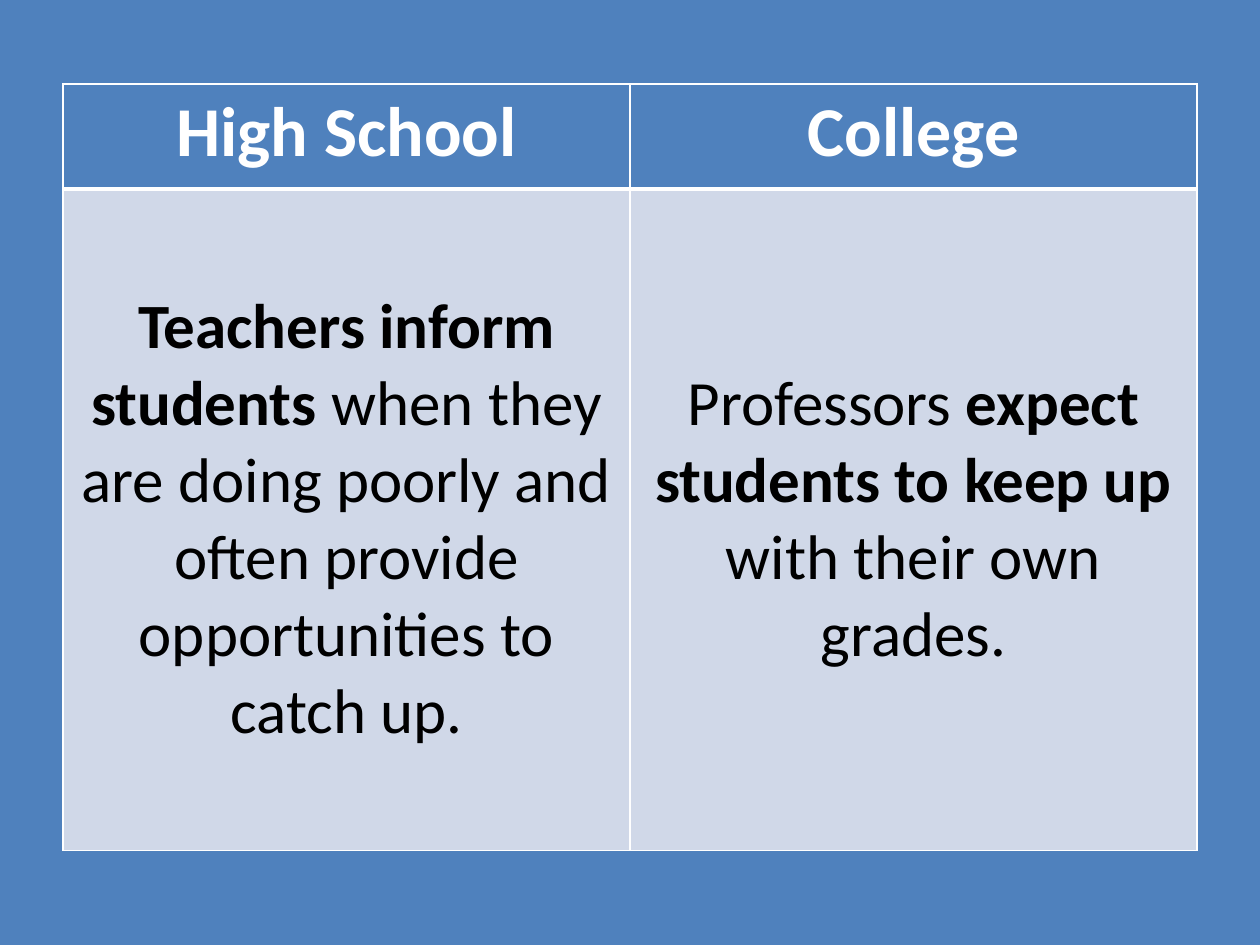
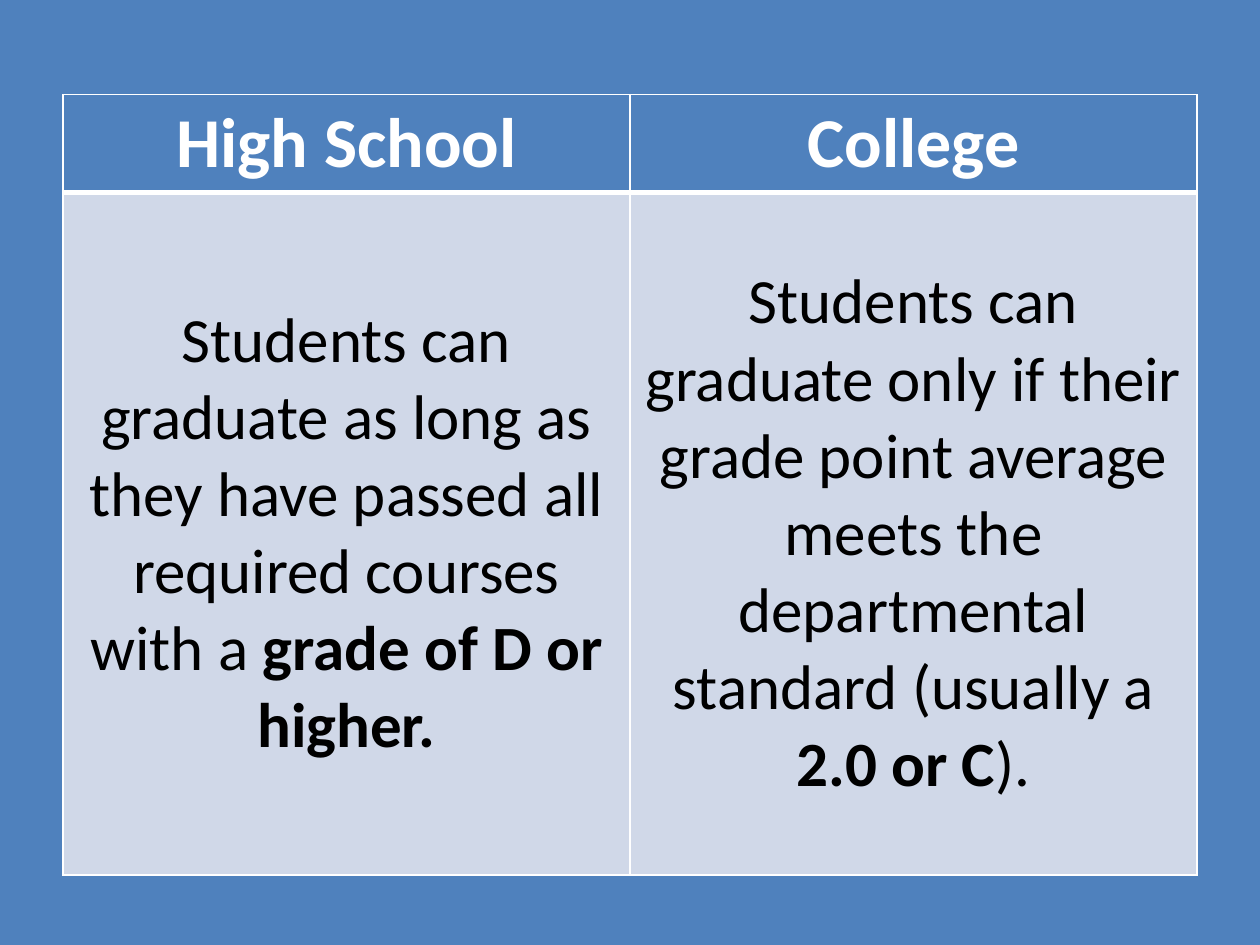
"""Build two slides that compare high school with college."""
from typing import NamedTuple

from lxml.etree import SubElement
from pptx import Presentation
from pptx.dml.color import RGBColor
from pptx.enum.text import MSO_ANCHOR as Anchor, PP_ALIGN as Align
from pptx.oxml.ns import qn
from pptx.util import Inches, Pt

WIDTH, HEIGHT = Inches(10), Inches(7.5)
COL, ROW = WIDTH // 20, HEIGHT // 90
BLUE, PALE, WHITE, BLACK = "4F81BD", "D0D8E8", "FFFFFF", "000000"
HEADINGS = ("High School", "College")


class Run(NamedTuple):
    """A stretch of text, bold or not."""
    text: str
    bold: bool = False


class CellStyle(NamedTuple):
    """The look of one table row; borders run left, right, top, bottom in points."""
    fill: str
    color: str
    size: int
    anchor: Anchor
    borders: tuple[int, int, int, int]


class Comparison(NamedTuple):
    """A two-column comparison, placed in grid rows."""
    top: int
    header_rows: int
    body_rows: int
    high_school: list[Run]
    college: list[Run]


HEADER = CellStyle(BLUE, WHITE, 40, Anchor.TOP, (1, 1, 1, 3))
BODY = CellStyle(PALE, BLACK, 36, Anchor.MIDDLE, (1, 1, 3, 1))

COMPARISONS = [
    Comparison(
        8, 10, 63,
        [Run("Teachers inform students ", True),
         Run("when they are doing poorly and often provide opportunities to catch up.")],
        [Run("Professors "), Run("expect students to keep up ", True),
         Run("with their own grades.")]),
    Comparison(
        9, 9, 65,
        [Run("Students can graduate as long as they have passed all required courses with a "),
         Run("grade of D or higher.", True)],
        [Run("Students can graduate only if their grade point average meets "
             "the departmental standard (usually a "),
         Run("2.0 or C", True), Run(").")]),
]


def rgb(color: str) -> RGBColor:
    """Turn a hex string into a colour."""
    return RGBColor.from_string(color)


def paint(fill, color: str) -> None:
    """Make a fill solid in one colour."""
    fill.solid()
    fill.fore_color.rgb = rgb(color)


def add_borders(cell, widths: tuple[int, int, int, int]) -> None:
    """Draw white borders of the given widths around a cell."""
    props = cell._tc.get_or_add_tcPr()
    for side, width in zip("LRTB", widths):
        line = SubElement(props, qn(f"a:ln{side}"), w=str(Pt(width)))
        solid = SubElement(line, qn("a:solidFill"))
        SubElement(solid, qn("a:srgbClr"), val=WHITE)


def fill_cell(cell, runs: list[Run], style: CellStyle) -> None:
    """Write runs of text into a cell and style it."""
    add_borders(cell, style.borders)
    paint(cell.fill, style.fill)
    cell.vertical_anchor = style.anchor
    p = cell.text_frame.paragraphs[0]
    p.alignment = Align.CENTER
    for run in runs:
        r = p.add_run()
        r.text = run.text
        font = {"name": "Calibri", "size": Pt(style.size), "bold": run.bold}
        for name, value in font.items():
            setattr(r.font, name, value)
        r.font.color.rgb = rgb(style.color)


def add_comparison(prs, comparison: Comparison) -> None:
    """Add a slide that holds one comparison table."""
    s = prs.slides.add_slide(prs.slide_layouts[6])
    paint(s.background.fill, BLUE)
    heights = (comparison.header_rows, comparison.body_rows)
    table = s.shapes.add_table(2, 2, COL, comparison.top * ROW,
                               18 * COL, sum(heights) * ROW).table
    for row, height in zip(table.rows, heights):
        row.height = height * ROW
    bodies = (comparison.high_school, comparison.college)
    for i, (heading, body) in enumerate(zip(HEADINGS, bodies)):
        fill_cell(table.cell(0, i), [Run(heading, True)], HEADER)
        fill_cell(table.cell(1, i), body, BODY)


def main() -> None:
    """Build and save the presentation."""
    prs = Presentation()
    prs.slide_width, prs.slide_height = WIDTH, HEIGHT
    for comparison in COMPARISONS:
        add_comparison(prs, comparison)
    prs.save("out.pptx")


if __name__ == "__main__":
    main()
